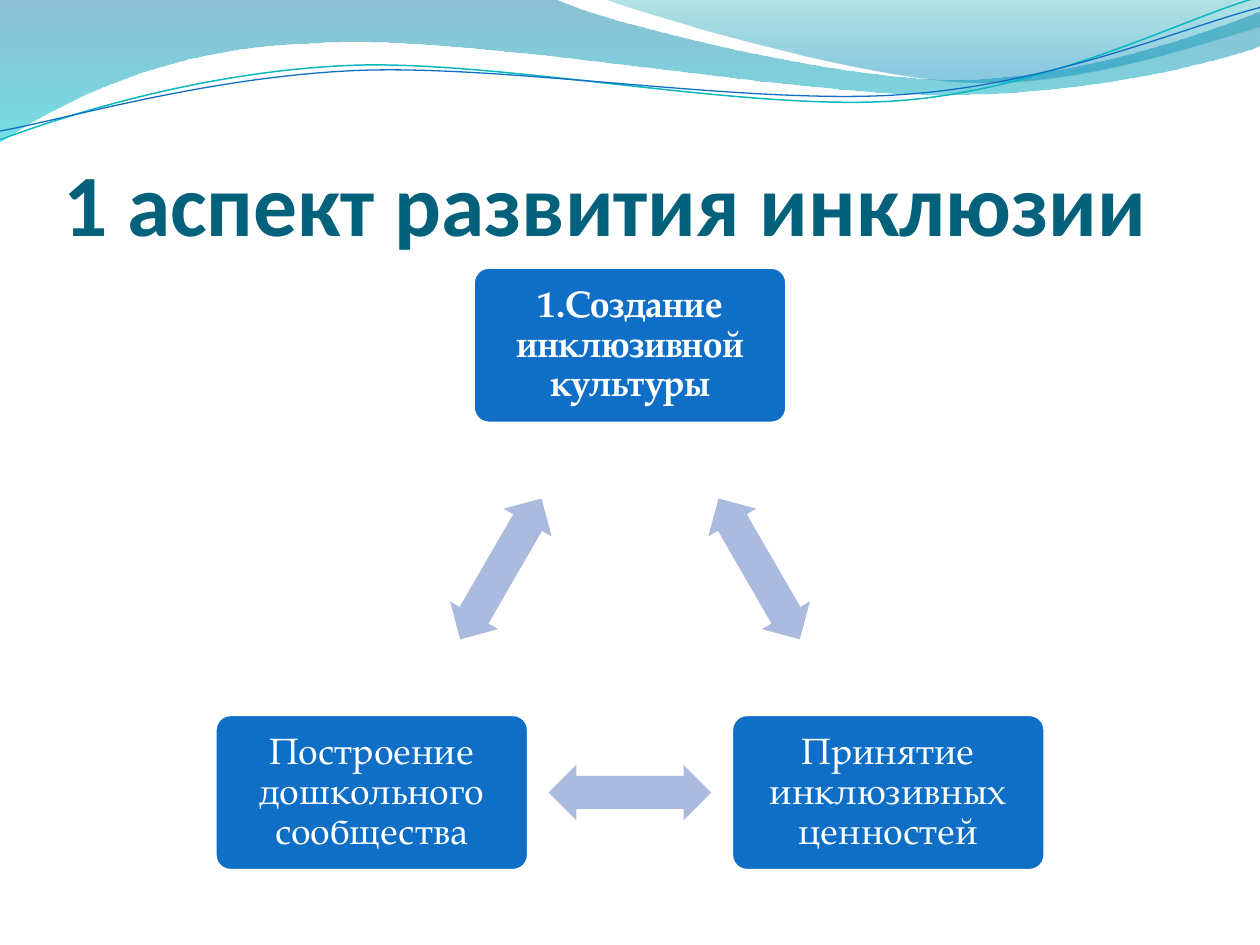
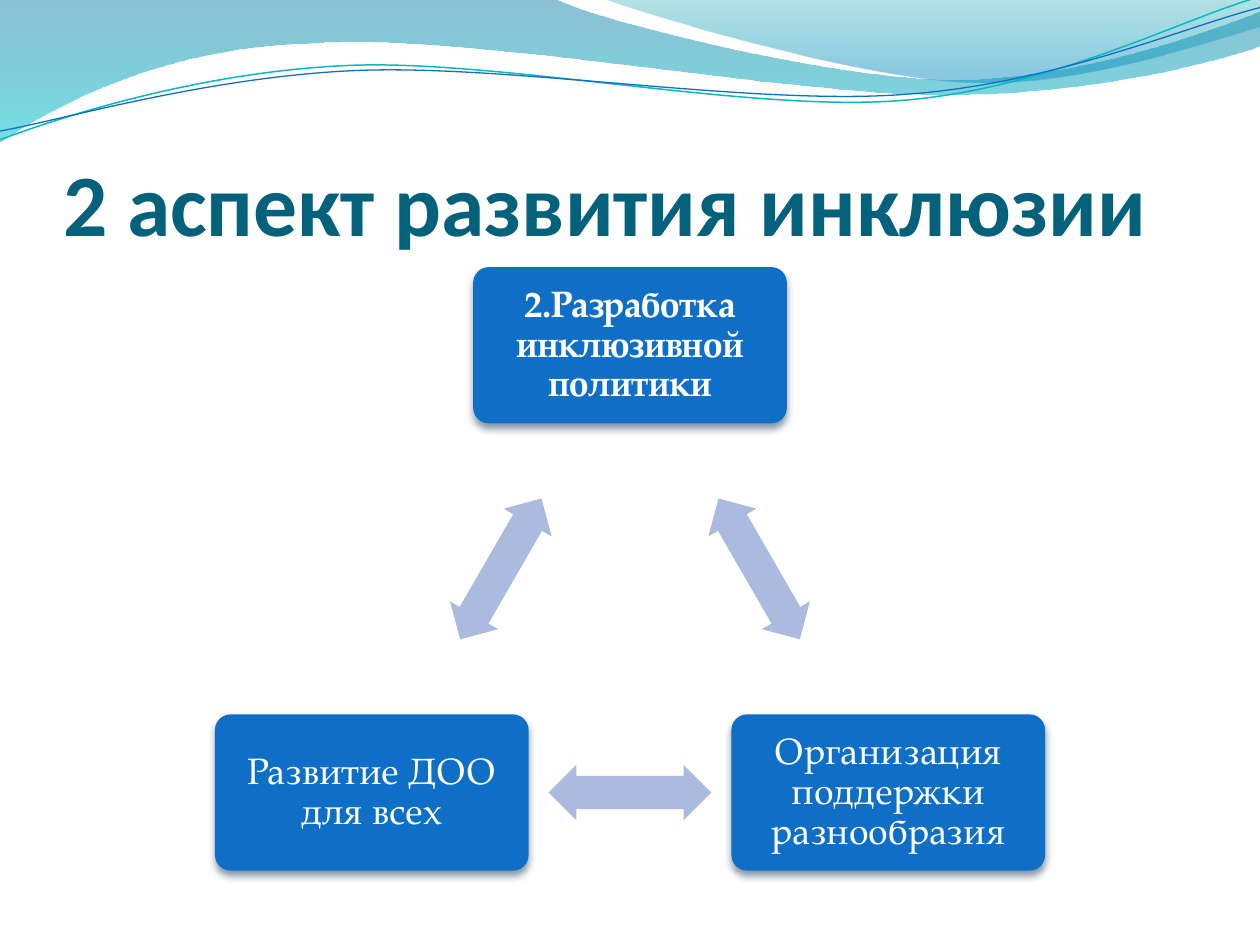
import math

from lxml import etree
from pptx import Presentation
from pptx.dml.color import RGBColor
from pptx.enum.shapes import MSO_SHAPE
from pptx.enum.text import MSO_ANCHOR, MSO_AUTO_SIZE, PP_ALIGN
from pptx.oxml.ns import qn
from pptx.util import Inches, Pt

ROUND_RECT = MSO_SHAPE.ROUNDED_RECTANGLE
DOUBLE_ARROW = MSO_SHAPE.LEFT_RIGHT_ARROW
MIDDLE, BOTTOM = MSO_ANCHOR.MIDDLE, MSO_ANCHOR.BOTTOM
LEFT, CENTER = PP_ALIGN.LEFT, PP_ALIGN.CENTER
NO_AUTOFIT = MSO_AUTO_SIZE.NONE

WHITE = RGBColor(0xFF, 0xFF, 0xFF)
BLUE = RGBColor(0x0F, 0x6F, 0xC6)
TEAL = RGBColor(0x0A, 0xB8, 0xBF)
TITLE_COLOR = RGBColor(0x04, 0x61, 0x7B)
ARROW_COLOR = RGBColor(0xAB, 0xBB, 0xDF)
SHADOW_COLOR = RGBColor(0x04, 0x27, 0x47)
DEEP_BLUE = RGBColor(0x00, 0x74, 0xA1)
AQUA = RGBColor(0x00, 0xC6, 0xCF)
SEA_GREEN = RGBColor(0x00, 0xA1, 0xA9)
SKY = RGBColor(0x00, 0x8B, 0xBF)

TITLE_FONT = "Calibri"
BODY_FONT = "TeX Gyre Pagella"

WAVE_BANDS = [
    ([(0, 0), (4.4, -0.01),
      (4.76, 0.17, 6.64, 0.63, 7.58, 0.63),
      (8.53, 0.63, 9.58, 0.26, 10, 0.09),
      (10.01, 0.36),
      (9.83, 0.44, 8.7, 0.76, 7.46, 0.75),
      (6.22, 0.75, 3.82, 0.28, 2.57, 0.34),
      (1.29, 0.36, 0.46, 0.83, -0.01, 1.13)],
     [(0, DEEP_BLUE, 45), (1, AQUA, 55)]),
    ([(4.79, -0.01),
      (5.09, 0.11, 6.82, 0.62, 7.69, 0.65),
      (8.56, 0.69, 9.61, 0.32, 10, 0.21),
      (10, 0)],
     [(0, SEA_GREEN, 30), (0.8, SKY, 45)]),
]
WAVE_LINES = [
    ([(0, 1.11),
      (0.48, 0.93, 1.58, 0.57, 2.77, 0.52),
      (3.95, 0.47, 5.93, 0.89, 7.13, 0.8),
      (8.33, 0.71, 9.38, 0.15, 9.98, -0.02)], TEAL, 0.85),
    ([(0, 1.04),
      (0.47, 0.96, 1.64, 0.61, 2.83, 0.56),
      (4.03, 0.51, 5.97, 0.84, 7.17, 0.75),
      (8.36, 0.67, 9.41, 0.21, 10, 0.06)], BLUE, 0.75),
]

SLIDES = [
    ("1 аспект развития инклюзии",
     ["1.Создание инклюзивной культуры",
      "Принятие инклюзивных ценностей",
      "Построение дошкольного сообщества"], False),
    ("2 аспект развития инклюзии",
     ["2.Разработка инклюзивной политики",
      "Организация поддержки разнообразия",
      "Развитие ДОО для всех"], True),
]


def set_alpha(color_element, percent):
    etree.SubElement(color_element, qn("a:alpha"), val=str(percent * 1000))


def bend_segments(shape, outline):
    segments = iter(list(shape._element.spPr.iter(qn("a:lnTo"))))
    for part in outline[1:]:
        first = next(segments)
        if len(part) == 6:
            curve = etree.Element(qn("a:cubicBezTo"))
            first.addprevious(curve)
            for segment in (first, next(segments), next(segments)):
                curve.append(segment[0])
                segment.getparent().remove(segment)


def add_outline(s, left, top, outline, close):
    points = [(left + Inches(x), top + Inches(y))
              for part in outline for x, y in zip(part[::2], part[1::2])]
    builder = s.shapes.build_freeform(*points[0])
    builder.add_line_segments(points[1:], close=close)
    shape = builder.convert_to_shape()
    bend_segments(shape, outline)
    shape.shadow.inherit = False
    return shape


def add_wave(s, left, top):
    for outline, stops in WAVE_BANDS:
        band = add_outline(s, left, top, outline, True)
        band.line.fill.background()
        band.fill.gradient()
        band.fill.gradient_angle = 270
        for stop, (position, color, _) in zip(band.fill.gradient_stops, stops):
            stop.position = position
            stop.color.rgb = color
        colors = band._element.spPr.iter(qn("a:srgbClr"))
        for element, (_, _, alpha) in zip(list(colors), stops):
            set_alpha(element, alpha)
    for outline, color, width in WAVE_LINES:
        line = add_outline(s, left, top, outline, False)
        line.fill.background()
        line.line.color.rgb = color
        line.line.width = Pt(width)


def add_run(p, text, font, size, color, bold):
    r = p.add_run()
    r.text = text
    r.font.name = font
    r.font.size = Pt(size)
    r.font.color.rgb = color
    r.font.bold = bold


def set_title(s, left, top, width, height, text):
    title = s.shapes.title
    title.left, title.top, title.width, title.height = left, top, width, height
    tf = title.text_frame
    tf.word_wrap = True
    tf.auto_size = NO_AUTOFIT
    tf.vertical_anchor = BOTTOM
    tf.margin_left = tf.margin_right = tf.margin_bottom = 0
    tf.margin_top = Inches(0.05)
    p = tf.paragraphs[0]
    p.alignment = LEFT
    add_run(p, text, TITLE_FONT, 50, TITLE_COLOR, True)


def add_centered(s, kind, cx, cy, width, height, color):
    shape = s.shapes.add_shape(kind, int(cx - width / 2), int(cy - height / 2),
                               width, height)
    shape.shadow.inherit = False
    shape.fill.solid()
    shape.fill.fore_color.rgb = color
    shape.line.fill.background()
    return shape


def add_shadow(shape):
    effects = shape._element.spPr.find(qn("a:effectLst"))
    outer = etree.SubElement(effects, qn("a:outerShdw"), blurRad=str(Pt(4.5)),
                             dist=str(Pt(3)), dir="5400000", rotWithShape="0")
    set_alpha(etree.SubElement(outer, qn("a:srgbClr"), val=str(SHADOW_COLOR)), 48)


def add_node(s, cx, cy, width, height, text, bold, raised):
    node = add_centered(s, ROUND_RECT, cx, cy, width, height, BLUE)
    node.adjustments[0] = 0.1
    if raised:
        add_shadow(node)
    else:
        node.line.color.rgb = WHITE
        node.line.width = Pt(2)
    tf = node.text_frame
    tf.word_wrap = True
    tf.vertical_anchor = MIDDLE
    tf.margin_left = tf.margin_right = tf.margin_top = tf.margin_bottom = Inches(0.13)
    p = tf.paragraphs[0]
    p.alignment = CENTER
    p.line_spacing = 0.9
    add_run(p, text, BODY_FONT, 21, WHITE, bold)


def add_cycle(s, left, top, width, height, labels, raised):
    node_w, node_h = Inches(2.49), Inches(1.24)
    radius = (height - node_h) / 1.5
    cx, cy = left + width / 2, top + node_h / 2 + radius
    for i, label in enumerate(labels):
        angle = math.radians(120 * i - 90)
        add_node(s, cx + radius * math.cos(angle), cy + radius * math.sin(angle),
                 node_w, node_h, label, i == 0, raised)
        side = math.radians(120 * i - 30)
        arrow = add_centered(s, DOUBLE_ARROW, cx + radius / 2 * math.cos(side),
                             cy + radius / 2 * math.sin(side),
                             Inches(1.29), Inches(0.44), ARROW_COLOR)
        arrow.adjustments[0] = 0.6
        arrow.adjustments[1] = 0.5
        arrow.rotation = 60 + 120 * i


def add_aspect_slide(prs, title, labels, raised):
    s = prs.slides.add_slide(prs.slide_layouts[5])
    add_wave(s, 0, 0)
    set_title(s, Inches(0.5), Inches(0.77), Inches(9), Inches(1.25), title)
    add_cycle(s, Inches(1.7), Inches(2.12), Inches(6.6), Inches(4.79), labels, raised)


def main():
    prs = Presentation()
    prs.slide_width, prs.slide_height = Inches(10), Inches(7.5)
    for title, labels, raised in SLIDES:
        add_aspect_slide(prs, title, labels, raised)
    prs.save("out.pptx")


if __name__ == "__main__":
    main()
